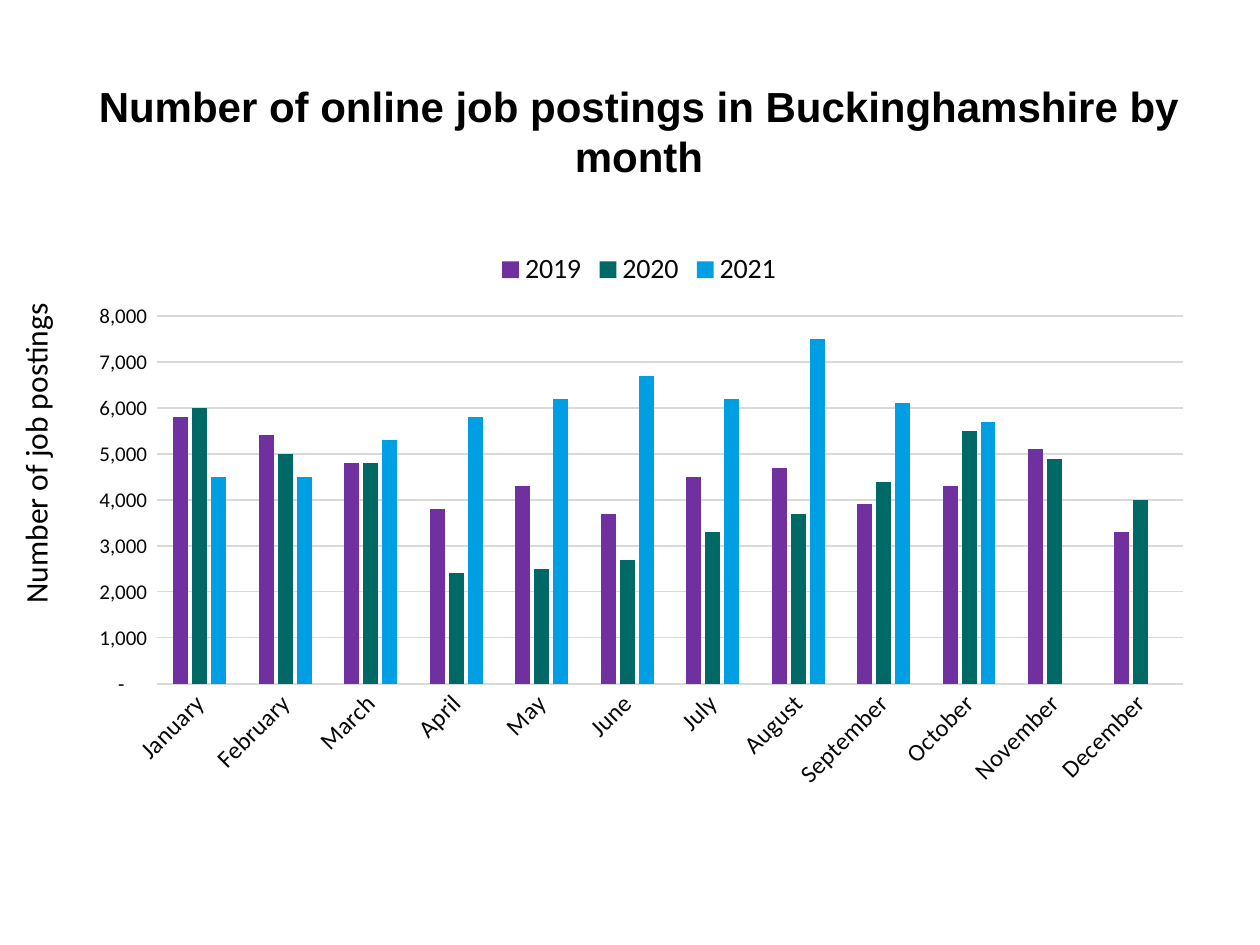
from lxml import etree
from pptx import Presentation
from pptx.chart.data import CategoryChartData
from pptx.dml.color import RGBColor
from pptx.enum.chart import XL_CHART_TYPE as ChartType, XL_LEGEND_POSITION as LegendPosition, XL_TICK_MARK as TickMark
from pptx.enum.text import MSO_ANCHOR as Anchor, MSO_AUTO_SIZE as AutoSize, PP_ALIGN as Align
from pptx.oxml.ns import qn
from pptx.util import Pt

SCALE = 914400 / 126


def px(*lengths):
    return [round(length * SCALE) for length in lengths]


def color(target, value):
    target.rgb = RGBColor.from_string(value)


deck = Presentation()
deck.slide_width, deck.slide_height = px(1260, 945)
page = deck.slides.add_slide(deck.slide_layouts[6])

labels = [
    ("Number of online job postings in Buckinghamshire by month", (72, 52, 1134, 157), "Arial", 24, True, Align.CENTER, Anchor.MIDDLE),
    ("Number of job postings", (10, 262, 63, 354), "Calibri", 18, False, Align.LEFT, Anchor.TOP),
]
for text, place, font, size, bold, align, anchor in labels:
    box = page.shapes.add_textbox(*px(*place))
    frame = box.text_frame
    frame.word_wrap = True
    frame.vertical_anchor = anchor
    para = frame.paragraphs[0]
    para.alignment = align
    span = para.add_run()
    span.text = text
    span.font.name = font
    span.font.size = Pt(size)
    span.font.bold = bold
    color(span.font.color, "000000")

frame.auto_size = AutoSize.SHAPE_TO_FIT_TEXT
frame._txBody.bodyPr.set("vert", "vert270")

months = ["January", "February", "March", "April", "May", "June", "July",
          "August", "September", "October", "November", "December"]
years = [
    ("2019", "7030A0", [5800, 5400, 4800, 3800, 4300, 3700, 4500, 4700, 3900, 4300, 5100, 3300]),
    ("2020", "006965", [6000, 5000, 4800, 2400, 2500, 2700, 3300, 3700, 4400, 5500, 4900, 4000]),
    ("2021", "009FE3", [4500, 4500, 5300, 5800, 6200, 6700, 6200, 7500, 6100, 5700, None, None]),
]
number_format = '_-* #,##0_-;\\-* #,##0_-;_-* "-"??_-;_-@_-'
data = CategoryChartData(number_format=number_format)
data.categories = months
for year, fill, postings in years:
    data.add_series(year, postings)

chart = page.shapes.add_chart(ChartType.COLUMN_CLUSTERED, *px(72, 238, 1134, 562), data).chart
chart.has_title = False
chart.font.name = "Calibri"
chart.font.size = Pt(10)
color(chart.font.color, "000000")
chart.has_legend = True
chart.legend.position = LegendPosition.TOP
chart.legend.include_in_layout = False

plot = chart.plots[0]
plot.gap_width = 219
plot.overlap = -27
plot.vary_by_categories = False
for series, (year, fill, postings) in zip(plot.series, years):
    series.format.fill.solid()
    color(series.format.fill.fore_color, fill)

months_axis, postings_axis = chart.category_axis, chart.value_axis
for axis in (months_axis, postings_axis):
    axis.major_tick_mark = axis.minor_tick_mark = TickMark.NONE
for font, size in ((months_axis.tick_labels.font, 14), (postings_axis.tick_labels.font, 12), (chart.legend.font, 16)):
    font.name = "Calibri"
    font.size = Pt(size)
    color(font.color, "080808")

postings_axis.minimum_scale = 0
postings_axis.maximum_scale = 8000
postings_axis.major_unit = 1000
postings_axis.tick_labels.number_format = number_format
postings_axis.tick_labels.number_format_is_linked = False
postings_axis.format.line.fill.background()
for line in (months_axis.format.line, postings_axis.major_gridlines.format.line):
    line.width = Pt(0.75)
    color(line.color, "D9D9D9")
months_axis._element.find(qn("c:txPr")).find(qn("a:bodyPr")).set("rot", "-2700000")

area = chart._chartSpace.chart.plotArea
for layout in area.findall(qn("c:layout")):
    area.remove(layout)
layout = etree.Element(qn("c:layout"))
manual = etree.SubElement(layout, qn("c:manualLayout"))
for tag, value in (("layoutTarget", "inner"), ("xMode", "edge"), ("yMode", "edge"),
                   ("x", 85 / 1134), ("y", 78 / 562), ("w", 1026 / 1134), ("h", 368 / 562)):
    etree.SubElement(manual, qn(f"c:{tag}")).set("val", str(value))
area.insert(0, layout)

deck.save("out.pptx")
